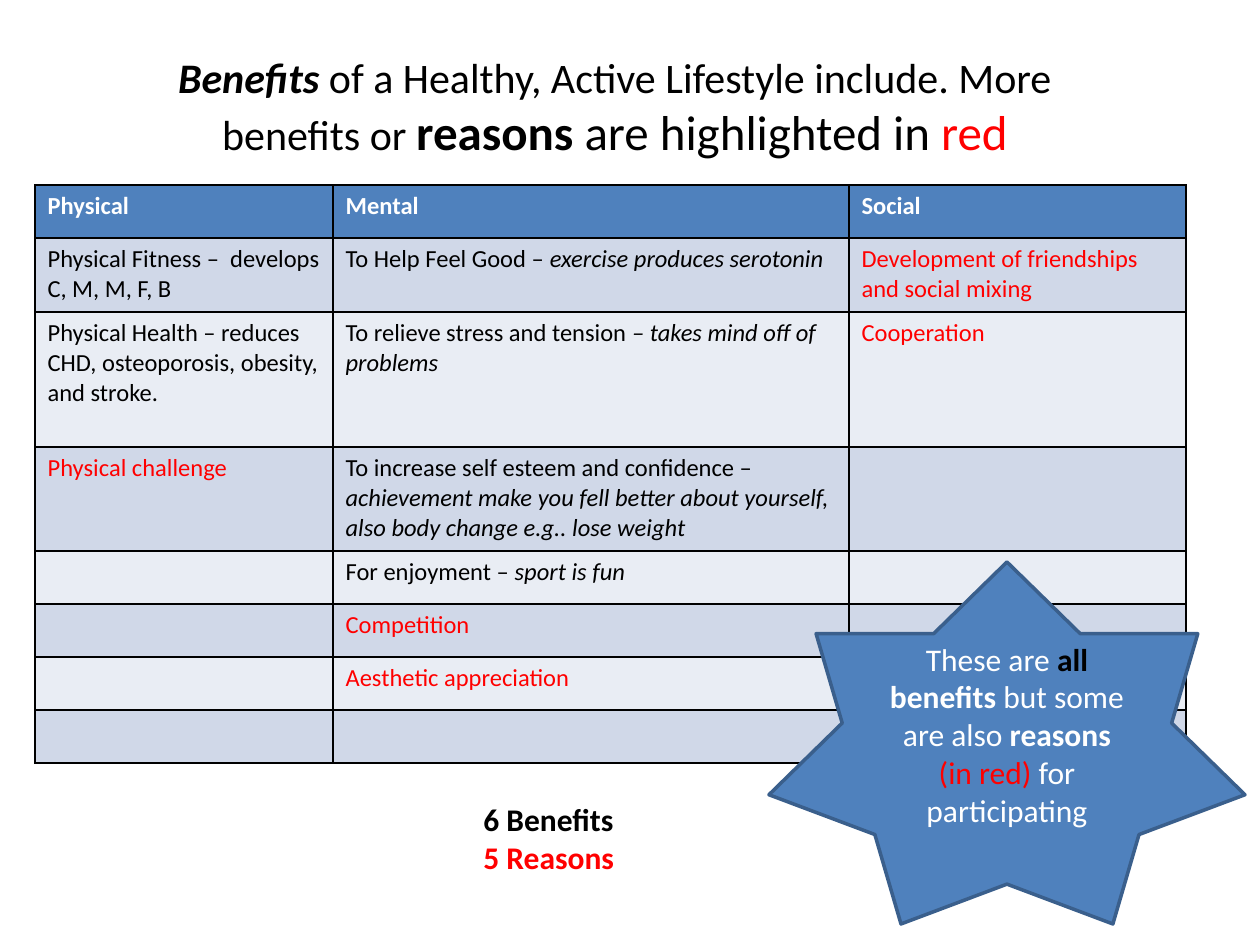
"""Builds a slide on the benefits of a healthy, active lifestyle."""
from lxml import etree
from pptx import Presentation
from pptx.dml.color import RGBColor
from pptx.enum.shapes import MSO_SHAPE
from pptx.enum.text import MSO_ANCHOR, MSO_AUTO_SIZE, PP_ALIGN
from pptx.oxml.ns import qn
from pptx.util import Emu, Pt

STAR = MSO_SHAPE.STAR_7_POINT
TOP, MIDDLE = MSO_ANCHOR.TOP, MSO_ANCHOR.MIDDLE
CENTER, LEFT = PP_ALIGN.CENTER, PP_ALIGN.LEFT
NO_FIT = MSO_AUTO_SIZE.NONE
BLACK, WHITE, RED = "000000", "FFFFFF", "FF0000"
BLUE, BLUE_LINE = "4F81BD", "3A5F8C"
BANDS = ["D0D8E8", "E9EDF4"]
FONT = "Calibri"

# Each run is (text, colour, style letters, size or None).
TITLE = [
    ("Benefits", BLACK, "bi", 24),
    (" of a Healthy, Active Lifestyle include. More benefits or ", BLACK, "", 24),
    ("reasons ", BLACK, "b", 28),
    ("are highlighted in ", BLACK, "", 28),
    ("red", RED, "", 28),
]
HEADERS = ["Physical", "Mental", "Social"]
ROWS = [
    [[("Physical Fitness –  develops C, M, M, F, B", BLACK, "")],
     [("To Help Feel Good – ", BLACK, ""), ("exercise produces serotonin", BLACK, "i")],
     [("Development of friendships and social mixing", RED, "")]],
    [[("Physical Health – reduces CHD, osteoporosis, obesity, and stroke.", BLACK, "")],
     [("To relieve stress and tension ", BLACK, ""),
      ("– takes mind off of problems", BLACK, "i")],
     [("Cooperation", RED, "")]],
    [[("Physical challenge", RED, "")],
     [("To increase self esteem and confidence – ", BLACK, ""),
      ("achievement make you fell better about yourself, "
       "also body change e.g.. lose weight", BLACK, "i")],
     []],
    [[], [("For enjoyment – ", BLACK, ""), ("sport is fun", BLACK, "i")], []],
    [[], [("Competition", RED, "")], []],
    [[], [("Aesthetic appreciation", RED, "")], []],
    [[], [], []],
]
COL_WIDTHS = [298, 516, 337]
ROW_HEIGHTS = [53, 74, 135, 104, 53, 53, 53, 53]
TOTALS = [[("6 Benefits", BLACK, "b")], [("5 Reasons", RED, "b")]]
STAR_TEXT = [
    ("These are ", WHITE, ""),
    ("all ", BLACK, "b"),
    ("benefits", WHITE, "b"),
    (" but some are also ", WHITE, ""),
    ("reasons ", WHITE, "b"),
    ("(in red) ", RED, ""),
    ("for participating", WHITE, ""),
]


def px(n):
    return Emu(round(n * 914400 / 126))


def box(*lengths):
    return [px(n) for n in lengths]


def rgb(value):
    return RGBColor.from_string(value)


def write(p, runs, size=None, align=LEFT):
    p.alignment = align
    p.font.name = FONT
    if size:
        p.font.size = Pt(size)
    for text, color, style, *own_size in runs:
        r = p.add_run()
        r.text = text
        r.font.color.rgb = rgb(color)
        r.font.bold = "b" in style
        r.font.italic = "i" in style
        if own_size:
            r.font.size = Pt(own_size[0])


def fill_cell(cell, runs, color):
    write(cell.text_frame.paragraphs[0], runs, 14)
    tc_pr = cell._tc.get_or_add_tcPr()
    for side in ("a:lnL", "a:lnR", "a:lnT", "a:lnB"):
        ln = etree.SubElement(tc_pr, qn(side), w=str(Pt(1)))
        solid = etree.SubElement(ln, qn("a:solidFill"))
        etree.SubElement(solid, qn("a:srgbClr"), val=BLACK)
    cell.fill.solid()
    cell.fill.fore_color.rgb = rgb(color)


def add_title(s):
    title = s.shapes.title
    title.left, title.top, title.width, title.height = box(154, 45, 922, 124)
    tf = title.text_frame
    tf.auto_size = NO_FIT
    tf.vertical_anchor = TOP
    write(tf.paragraphs[0], TITLE, align=CENTER)


def add_benefits(s):
    rows = [[[(h, WHITE, "b")] for h in HEADERS]] + ROWS
    frame = s.shapes.add_table(len(rows), len(HEADERS),
                               *box(35, 185, sum(COL_WIDTHS), sum(ROW_HEIGHTS)))
    table = frame.table
    for col, width in zip(table.columns, COL_WIDTHS):
        col.width = px(width)
    for i, (row, height) in enumerate(zip(rows, ROW_HEIGHTS)):
        table.rows[i].height = px(height)
        color = BANDS[(i - 1) % 2] if i else BLUE
        for j, runs in enumerate(row):
            fill_cell(table.cell(i, j), runs, color)


def add_totals(s):
    tf = s.shapes.add_textbox(*box(471, 794, 218, 89)).text_frame
    tf.word_wrap = True
    for i, runs in enumerate(TOTALS):
        write(tf.add_paragraph() if i else tf.paragraphs[0], runs, 18)


def add_star(s):
    star = s.shapes.add_shape(STAR, *box(769, 562, 476, 362))
    star.shadow.inherit = False
    star.fill.solid()
    star.fill.fore_color.rgb = rgb(BLUE)
    star.line.color.rgb = rgb(BLUE_LINE)
    star.line.width = Pt(2)
    tf = star.text_frame
    tf.word_wrap = True
    tf.vertical_anchor = MIDDLE
    write(tf.paragraphs[0], STAR_TEXT, 18, CENTER)


def main():
    prs = Presentation()
    prs.slide_width, prs.slide_height = box(1260, 945)
    s = prs.slides.add_slide(prs.slide_layouts[5])
    add_title(s)
    add_benefits(s)
    add_totals(s)
    add_star(s)
    prs.save("out.pptx")


if __name__ == "__main__":
    main()
